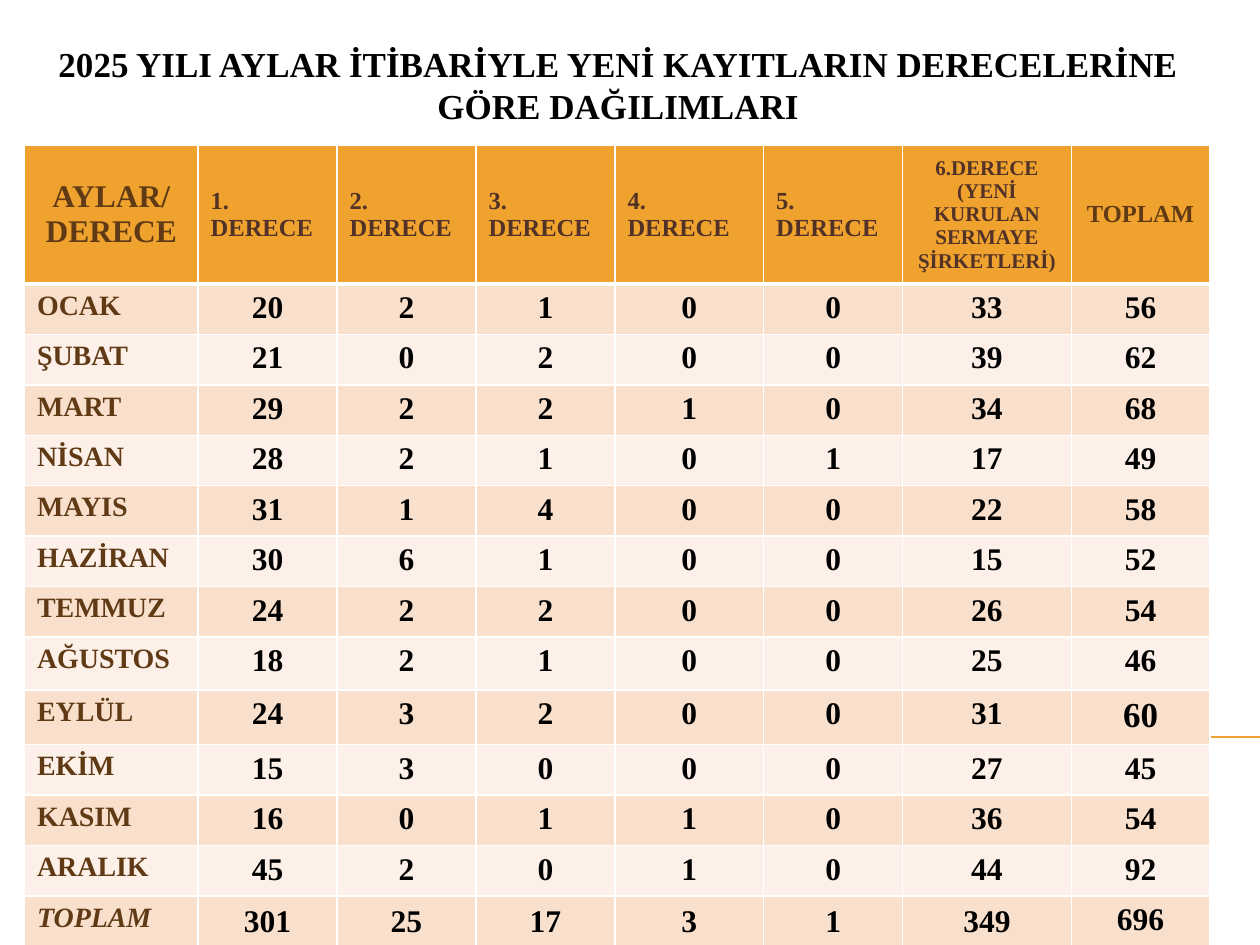
import pptx
import pptx.dml.color
import pptx.enum.shapes
import pptx.enum.text
import pptx.oxml.ns
import pptx.util
from lxml import etree

Pt = pptx.util.Pt
ALIGN = pptx.enum.text.PP_ALIGN
ANCHOR = pptx.enum.text.MSO_ANCHOR

FONT = "Times New Roman"
ORANGE, BROWN, DARK_BROWN = "F0A22E", "603A14", "523227"
BANDS = ("F9E0CD", "FCF0E8")
WHITE, BLACK = "FFFFFF", "000000"

TITLE = "2025 YILI AYLAR İTİBARİYLE YENİ KAYITLARIN DERECELERİNE GÖRE DAĞILIMLARI"
HEADERS = [
    ("AYLAR/ DERECE", 18, BROWN, ALIGN.CENTER),
    *[(f"{degree}. DERECE", 14, DARK_BROWN, ALIGN.LEFT) for degree in range(1, 6)],
    ("6.DERECE (YENİ KURULAN SERMAYE ŞİRKETLERİ)", 12, DARK_BROWN, ALIGN.CENTER),
    ("TOPLAM", 14, BROWN, ALIGN.CENTER),
]
MONTHS = [
    ("OCAK", 20, 2, 1, 0, 0, 33, 56),
    ("ŞUBAT", 21, 0, 2, 0, 0, 39, 62),
    ("MART", 29, 2, 2, 1, 0, 34, 68),
    ("NİSAN", 28, 2, 1, 0, 1, 17, 49),
    ("MAYIS", 31, 1, 4, 0, 0, 22, 58),
    ("HAZİRAN", 30, 6, 1, 0, 0, 15, 52),
    ("TEMMUZ", 24, 2, 2, 0, 0, 26, 54),
    ("AĞUSTOS", 18, 2, 1, 0, 0, 25, 46),
    ("EYLÜL", 24, 3, 2, 0, 0, 31, 60),
    ("EKİM", 15, 3, 0, 0, 0, 27, 45),
    ("KASIM", 16, 0, 1, 1, 0, 36, 54),
    ("ARALIK", 45, 2, 0, 1, 0, 44, 92),
    ("TOPLAM", 301, 25, 17, 3, 1, 349, 696),
]
COLUMN_WIDTHS = [99.2, 79.4, 79.4, 79.4, 85, 79.4, 96.4, 79.2]
HEADER_HEIGHT, ROW_HEIGHT, TALL_HEIGHT = 77.8, 28.2, 30.3
TALL_MONTHS = ("AĞUSTOS", "EYLÜL")
LARGE_TOTAL_MONTH = "EYLÜL"


def rgb(color):
    return pptx.dml.color.RGBColor.from_string(color)


def write(text_frame, text, size, color, align, italic=False):
    text_frame.text = text
    paragraph = text_frame.paragraphs[0]
    paragraph.alignment = align
    font = paragraph.runs[0].font
    font.name, font.size, font.bold, font.italic = FONT, Pt(size), True, italic
    font.color.rgb = rgb(color)


def style_cell(cell, fill, top=1, bottom=1):
    properties = cell._tc.get_or_add_tcPr()
    for side, width in (("L", 1), ("R", 1), ("T", top), ("B", bottom)):
        line = etree.SubElement(properties, pptx.oxml.ns.qn(f"a:ln{side}"), w=str(Pt(width)))
        solid = etree.SubElement(line, pptx.oxml.ns.qn("a:solidFill"))
        etree.SubElement(solid, pptx.oxml.ns.qn("a:srgbClr"), val=WHITE)
    cell.fill.solid()
    cell.fill.fore_color.rgb = rgb(fill)


def add_rule(slide):
    rule = slide.shapes.add_connector(
        pptx.enum.shapes.MSO_CONNECTOR.STRAIGHT, Pt(40.3), Pt(421.2), Pt(720), Pt(421.2))
    rule.line.color.rgb = rgb(ORANGE)
    rule.line.width = Pt(0.75)
    etree.SubElement(rule._element.spPr, pptx.oxml.ns.qn("a:effectLst"))


def add_title(slide):
    title = slide.shapes.add_textbox(Pt(20.2), Pt(20.9), Pt(666), Pt(45.4))
    title.text_frame.word_wrap = True
    write(title.text_frame, TITLE, 20, BLACK, ALIGN.CENTER)


def add_degree_table(slide):
    heights = [HEADER_HEIGHT] + [
        TALL_HEIGHT if month[0] in TALL_MONTHS else ROW_HEIGHT for month in MONTHS]
    table = slide.shapes.add_table(
        len(heights), len(COLUMN_WIDTHS), Pt(14), Pt(83),
        Pt(sum(COLUMN_WIDTHS)), Pt(sum(heights))).table
    for column, width in zip(table.columns, COLUMN_WIDTHS):
        column.width = Pt(width)
    for row, height in zip(table.rows, heights):
        row.height = Pt(height)

    for column, header in enumerate(HEADERS):
        cell = table.cell(0, column)
        style_cell(cell, ORANGE, bottom=3)
        cell.vertical_anchor = ANCHOR.MIDDLE
        write(cell.text_frame, *header)

    last_column = len(HEADERS) - 1
    for row, (name, *counts) in enumerate(MONTHS, start=1):
        is_total = row == len(MONTHS)
        for column, value in enumerate((name, *counts)):
            cell = table.cell(row, column)
            style_cell(cell, BANDS[(row - 1) % 2], top=3 if row == 1 else 1)
            if column == 0:
                write(cell.text_frame, name, 16, BROWN, ALIGN.LEFT, is_total)
                continue
            large = name == LARGE_TOTAL_MONTH and column == last_column
            write(cell.text_frame, str(value), 20 if large else 18, BLACK, ALIGN.CENTER)
            if is_total and column < last_column:
                cell.vertical_anchor = ANCHOR.MIDDLE
                cell.margin_left = cell.margin_top = cell.margin_right = Pt(0.72)
                cell.margin_bottom = Pt(0)


def main():
    presentation = pptx.Presentation()
    presentation.slide_width, presentation.slide_height = Pt(720), Pt(540)
    slide = presentation.slides.add_slide(presentation.slide_layouts[6])
    add_rule(slide)
    add_title(slide)
    add_degree_table(slide)
    presentation.save("out.pptx")


if __name__ == "__main__":
    main()
